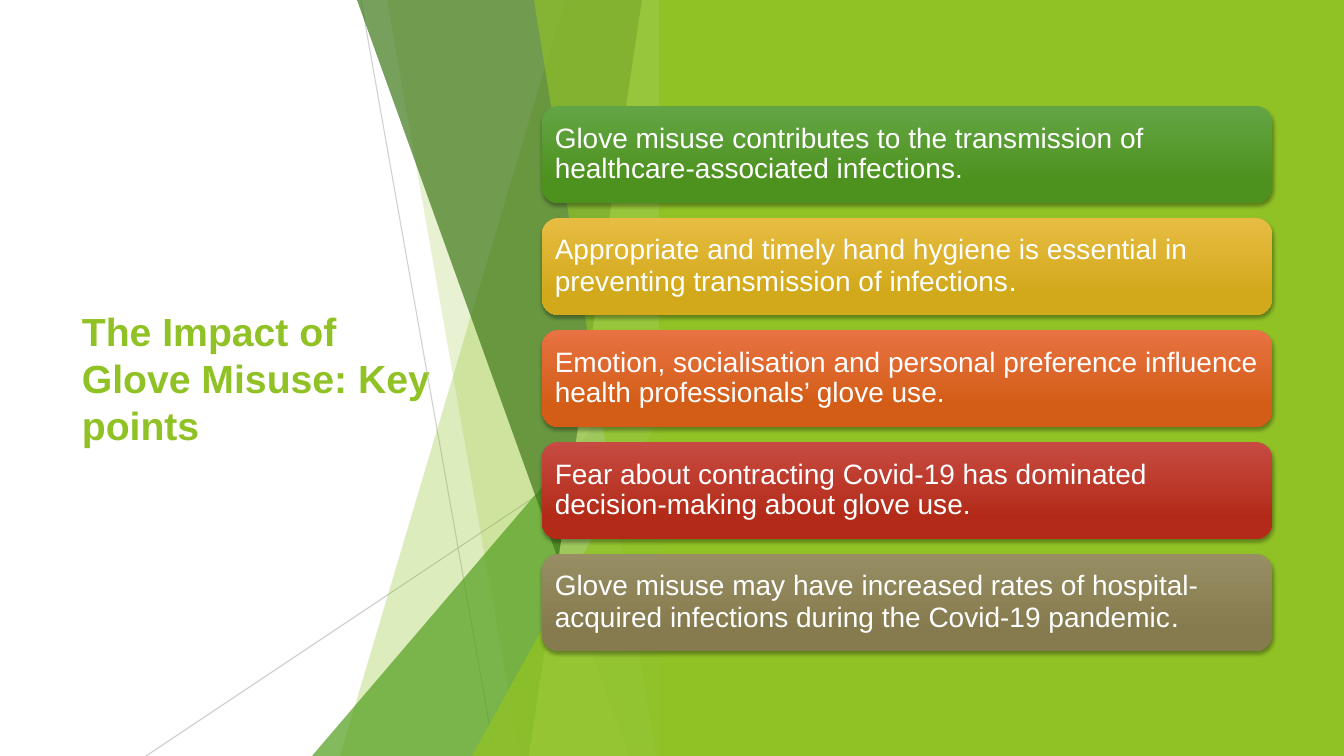
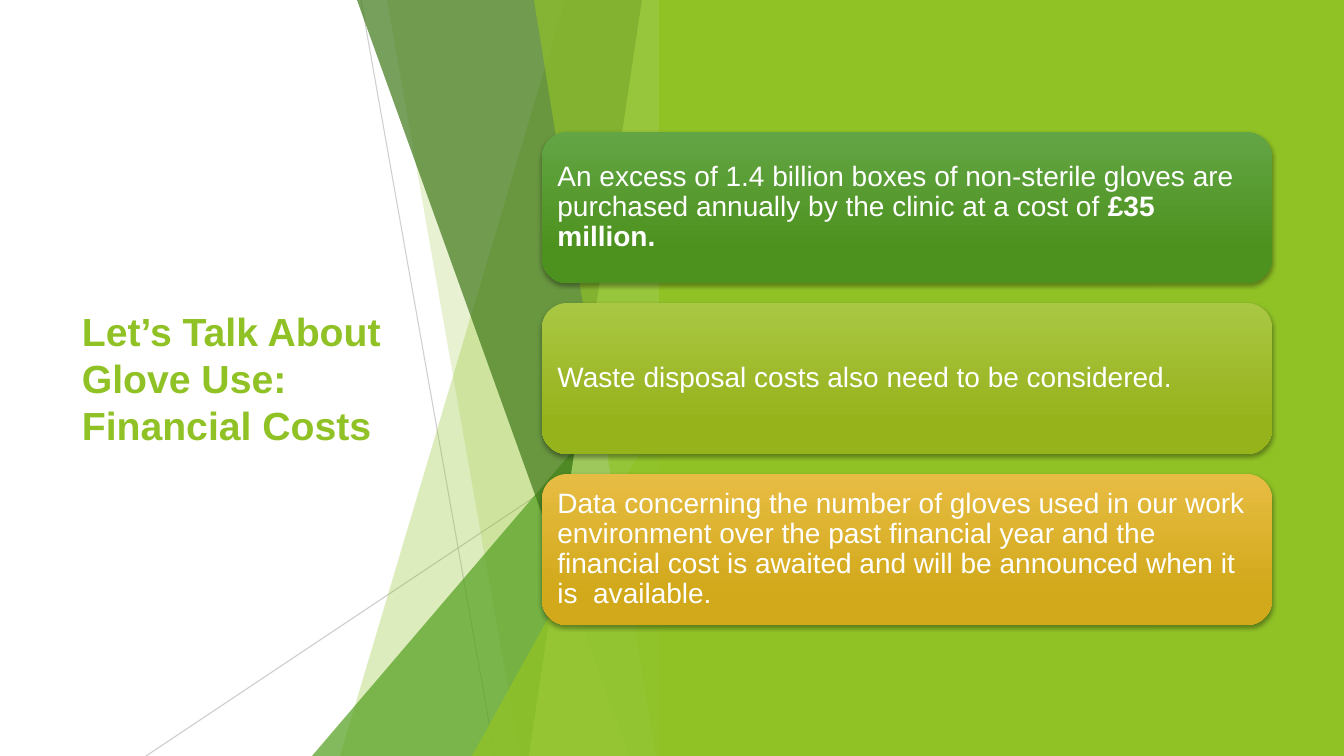
from dataclasses import dataclass
from typing import Any

from lxml import etree
from pptx import Presentation, util as u
from pptx.dml import color
from pptx.enum import shapes as s, text as t
from pptx.oxml import ns

# Scale and shared style
WIDE, HIGH = 1344, 756
SCALE = 12192000 / WIDE
FONT = "Arial"
LIME, LEAF, MOSS, PALE = "90C226", "54A021", "3F7819", "C0E474"
GREY, WHITE, BLACK = "BFBFBF", "FFFFFF", "000000"
EDGE = 671  # right edge of the facets
PANEL = 659  # left edge of the green panel
PAD = 8  # inner margin of a card

# Card colours, from top to bottom
GREEN = ("63A545", "4D921E")
OLIVE = ("AAC744", "97B31C")
GOLD = ("E7BC43", "D2A91B")
RUST = ("E87242", "D35D16")
RED = ("C74B42", "B32B18")
TAUPE = ("988E64", "857B4E")


@dataclass(frozen=True)
class Ray:
    ends: tuple[int, int, int, int]
    alpha: int


@dataclass(frozen=True)
class Band:
    top: int
    foot: int
    hue: str
    alpha: int


@dataclass(frozen=True)
class Wedge:
    left: int
    top: int
    hue: str
    alpha: int


@dataclass(frozen=True)
class Card:
    hues: tuple[str, str]
    text: str
    tail: str = ""
    size: int = 20  # size of the tail
    bold: bool = False


@dataclass(frozen=True)
class Page:
    title: str
    top: int
    high: int
    step: int
    cards: tuple[Card, ...]


RAYS = (Ray((361, 0, 495, HIGH), 75), Ray((EDGE, 406, 146, HIGH), 80))
FACETS = (
    Band(565, 340, LIME, 30),
    Band(387, 520, LIME, 20),
    Wedge(312, 336, LEAF, 72),
    Band(357, 629, MOSS, 70),
    Band(642, 529, PALE, 70),
    Band(534, 656, LIME, 65),
    Wedge(472, 396, LIME, 80),
)

PAGES = (
    Page("The Impact of Glove Misuse: Key points", 106, 97, 112, (
        Card(GREEN, "Glove misuse contributes to the transmission of "
             "healthcare-associated infections."),
        Card(GOLD, "Appropriate and timely hand hygiene is essential in "
             "preventing transmission of infections", ".", 21),
        Card(RUST, "Emotion, socialisation and personal preference influence "
             "health professionals’ glove use."),
        Card(RED, "Fear about contracting Covid-19 has dominated "
             "decision-making about glove use."),
        Card(TAUPE, "Glove misuse may have increased rates of "
             "hospital-acquired infections during the Covid-19 pandemic", ".", 21),
    )),
    Page("Let’s Talk About Glove Use: Financial Costs", 132, 151, 171, (
        Card(GREEN, "An excess of 1.4 billion boxes of non-sterile gloves are "
             "purchased annually by the clinic at a cost of ",
             "£35 million.", bold=True),
        Card(OLIVE, "Waste disposal costs also need to be considered."),
        Card(GOLD, "Data concerning the number of gloves used in our work "
             "environment over the past financial year and the financial cost "
             "is awaited and will be announced when it is  available."),
    )),
)


# Helpers
def px(*nums: int) -> list[u.Emu]:
    return [u.Emu(round(n * SCALE)) for n in nums]


def rgb(code: str) -> color.RGBColor:
    return color.RGBColor.from_string(code)


def fade(item: Any, alpha: int) -> None:
    for node in item.element.spPr.iter(ns.qn("a:srgbClr")):
        etree.SubElement(node, ns.qn("a:alpha"), val=str(alpha * 1000))


def paint(item: Any, code: str, alpha: int = 100) -> None:
    item.shadow.inherit = False
    item.line.fill.background()
    item.fill.solid()
    item.fill.fore_color.rgb = rgb(code)
    if alpha < 100:
        fade(item, alpha)


def style(run: Any, size: int, code: str, bold: bool = False) -> None:
    run.font.name = FONT
    run.font.size = u.Pt(size)
    run.font.bold = bold
    run.font.color.rgb = rgb(code)


def cast(item: Any) -> None:
    """Give a card its soft shadow below."""
    item.shadow.inherit = False
    box = item.element.spPr.find(ns.qn("a:effectLst"))
    drop = etree.SubElement(box, ns.qn("a:outerShdw"), blurRad="38100",
                            dist="25400", dir="5400000", rotWithShape="0")
    tint = etree.SubElement(drop, ns.qn("a:srgbClr"), val=BLACK)
    etree.SubElement(tint, ns.qn("a:alpha"), val="35000")


# Backdrop
def draw_ray(slide: Any, ray: Ray) -> None:
    line = slide.shapes.add_connector(s.MSO_CONNECTOR.STRAIGHT, *px(*ray.ends))
    line.line.color.rgb = rgb(GREY)
    line.line.width = u.Pt(0.75)
    fade(line, ray.alpha)
    etree.SubElement(line.element.spPr, ns.qn("a:effectLst"))


def draw_band(slide: Any, band: Band) -> None:
    pen = slide.shapes.build_freeform(band.top, 0, scale=SCALE)
    pen.add_line_segments([(EDGE, 0), (EDGE, HIGH), (band.foot, HIGH)], close=True)
    paint(pen.convert_to_shape(), band.hue, band.alpha)


def draw_wedge(slide: Any, wedge: Wedge) -> None:
    item = slide.shapes.add_shape(
        s.MSO_SHAPE.ISOSCELES_TRIANGLE,
        *px(wedge.left, wedge.top, EDGE - wedge.left, HIGH - wedge.top))
    item.adjustments[0] = 1
    paint(item, wedge.hue, wedge.alpha)


def draw_back(slide: Any) -> None:
    for ray in RAYS:
        draw_ray(slide, ray)
    for facet in FACETS:
        if isinstance(facet, Band):
            draw_band(slide, facet)
        else:
            draw_wedge(slide, facet)
    panel = slide.shapes.add_shape(s.MSO_SHAPE.RECTANGLE,
                                   *px(PANEL, 0, WIDE - PANEL, HIGH))
    paint(panel, LIME)


# Content
def draw_title(slide: Any, title: str) -> None:
    frame = slide.shapes.add_textbox(*px(72, 152, 391, 452)).text_frame
    frame.word_wrap = True
    frame.vertical_anchor = t.MSO_ANCHOR.MIDDLE
    frame.text = title
    style(frame.paragraphs[0].runs[0], 28, LIME, True)


def draw_card(slide: Any, card: Card, top: int, high: int) -> None:
    item = slide.shapes.add_shape(s.MSO_SHAPE.ROUNDED_RECTANGLE,
                                  *px(542, top, 730, high))
    item.line.fill.background()
    item.fill.gradient()
    item.fill.gradient_angle = 270
    for stop, code, place in zip(item.fill.gradient_stops, card.hues, (0, 0.78)):
        stop.color.rgb = rgb(code)
        stop.position = place
    cast(item)

    frame = item.text_frame
    frame.word_wrap = True
    frame.vertical_anchor = t.MSO_ANCHOR.MIDDLE
    (frame.margin_left, frame.margin_top,
     frame.margin_right, frame.margin_bottom) = px(PAD, PAD, PAD, PAD)
    para = frame.paragraphs[0]
    para.text = card.text
    para.alignment = t.PP_ALIGN.LEFT
    para.line_spacing = 0.9
    style(para.runs[0], 20, WHITE)
    if card.tail:
        run = para.add_run()
        run.text = card.tail
        style(run, card.size, WHITE, card.bold)


def draw_page(deck: Any, page: Page) -> None:
    slide = deck.slides.add_slide(deck.slide_layouts[6])
    draw_title(slide, page.title)
    draw_back(slide)
    for i, card in enumerate(page.cards):
        draw_card(slide, card, page.top + i * page.step, page.high)


def main() -> None:
    deck = Presentation()
    deck.slide_width, deck.slide_height = px(WIDE, HIGH)
    for page in PAGES:
        draw_page(deck, page)
    deck.save("out.pptx")


if __name__ == "__main__":
    main()
